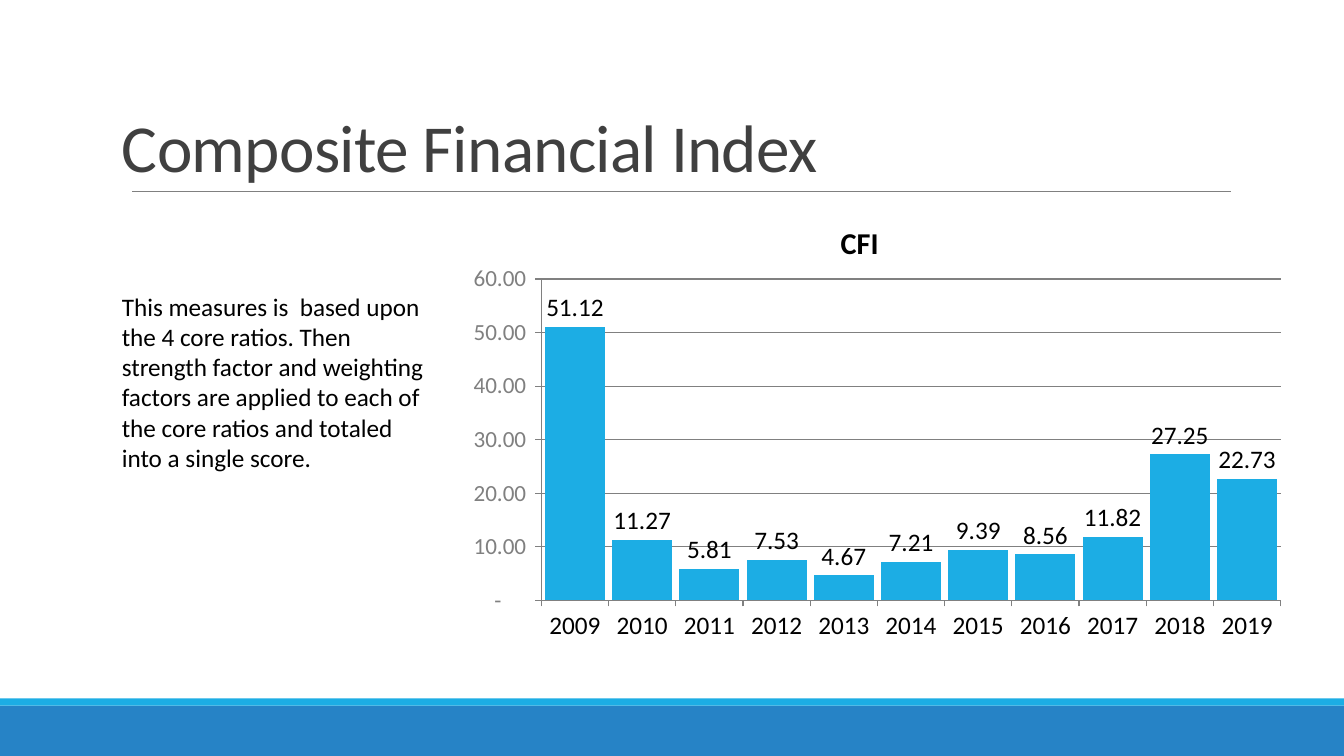
from dataclasses import dataclass

from lxml.etree import SubElement
from pptx import Presentation
from pptx.chart.data import CategoryChartData
from pptx.dml.color import RGBColor as RGB
from pptx.enum.chart import XL_CHART_TYPE as ChartType
from pptx.enum.chart import XL_LABEL_POSITION as LabelPos
from pptx.enum.chart import XL_TICK_MARK as Tick
from pptx.enum.shapes import MSO_CONNECTOR as Connector
from pptx.enum.shapes import MSO_SHAPE as Shape
from pptx.enum.text import MSO_ANCHOR as Anchor
from pptx.enum.text import MSO_AUTO_SIZE as AutoSize
from pptx.enum.text import PP_ALIGN as Align
from pptx.oxml import parse_xml
from pptx.oxml.ns import nsdecls, qn
from pptx.util import Cm, Pt


@dataclass(frozen=True)
class Theme:
    """Colours, font and type sizes of the deck."""
    font: str = "Calibri"
    title: RGB = RGB(0x40, 0x40, 0x40)
    text: RGB = RGB(0, 0, 0)
    muted: RGB = RGB(0x80, 0x80, 0x80)
    accent: RGB = RGB(0x1C, 0xAD, 0xE4)
    band: RGB = RGB(0x26, 0x83, 0xC6)
    title_size: Pt = Pt(48)
    chart_title_size: Pt = Pt(21.6)
    body_size: Pt = Pt(18)
    axis_size: Pt = Pt(16.5)


THEME = Theme()
WIDTH, HEIGHT = Cm(33.87), Cm(19.05)
VALUE_FORMAT = '_(* #,##0.00_);_(* \\(#,##0.00\\);_(* "-"??_);_(@_)'
YEARS = [str(year) for year in range(2009, 2020)]
CFI = [51.12, 11.27, 5.81, 7.53, 4.67, 7.21, 9.39, 8.56, 11.82, 27.25, 22.73]
NOTE = ("This measures is  based upon the 4 core ratios. Then strength factor "
        "and weighting factors are applied to each of the core ratios and "
        "totaled into a single score.")


def set_font(font, size, color, bold=False):
    """Apply the theme font with a size and colour."""
    font.name, font.size, font.bold = THEME.font, size, bold
    font.color.rgb = color


def add_footer(slide, x, y, w, h):
    """Draw the footer band with its thin accent strip on top."""
    strip = Cm(0.18)
    for top, height, color in ((y + strip, h - strip, THEME.band),
                               (y, strip, THEME.accent)):
        sp = slide.shapes.add_shape(Shape.RECTANGLE, x, top, w, height)
        sp.shadow.inherit = False
        sp.fill.solid()
        sp.fill.fore_color.rgb = color
        sp.line.fill.background()


def add_title(slide, text, x, y, w, h):
    """Place the title in its box with a rule along the bottom."""
    sp = slide.shapes.title
    sp.left, sp.top, sp.width, sp.height = x, y, w, h
    tf = sp.text_frame
    tf.auto_size, tf.word_wrap = AutoSize.NONE, True
    tf.vertical_anchor = Anchor.BOTTOM
    p = tf.paragraphs[0]
    p.alignment, p.line_spacing = Align.LEFT, 0.85
    r = p.add_run()
    r.text = text
    set_font(r.font, THEME.title_size, THEME.title)
    r.font._element.set("spc", "-50")
    left, bottom = x + Cm(0.51), y + h
    rule = slide.shapes.add_connector(Connector.STRAIGHT, left, bottom,
                                      left + Cm(27.69), bottom)
    rule.line.color.rgb, rule.line.width = THEME.muted, Pt(0.5)
    SubElement(rule._element.spPr, qn("a:effectLst"))


def add_note(slide, text, x, y, w, h):
    """Place the explanatory paragraph in its box."""
    tf = slide.shapes.add_textbox(x, y, w, h).text_frame
    tf.word_wrap = True
    r = tf.paragraphs[0].add_run()
    r.text = text
    set_font(r.font, THEME.body_size, THEME.text)


def set_plot_area(chart, x, y, w, h):
    """Fix the inner plot area, given as fractions of the chart."""
    parts = "".join(f'<c:{tag} val="{value:.3f}"/>'
                    for tag, value in zip("xywh", (x, y, w, h)))
    layout = parse_xml(
        f'<c:layout {nsdecls("c")}><c:manualLayout><c:layoutTarget val="inner"/>'
        f'<c:xMode val="edge"/><c:yMode val="edge"/>{parts}'
        '</c:manualLayout></c:layout>')
    area = chart._chartSpace.chart.plotArea
    for old in area.findall(qn("c:layout")):
        area.remove(old)
    area.insert(0, layout)


def style_axes(chart):
    """Format the year axis, the value axis and its gridlines."""
    years, values = chart.category_axis, chart.value_axis
    for axis, size, color in ((years, THEME.body_size, THEME.text),
                              (values, THEME.axis_size, THEME.muted)):
        axis.major_tick_mark, axis.minor_tick_mark = Tick.OUTSIDE, Tick.NONE
        axis.format.line.color.rgb = THEME.muted
        set_font(axis.tick_labels.font, size, color)
    values.minimum_scale, values.maximum_scale, values.major_unit = 0, 60, 10
    values.has_major_gridlines = True
    values.major_gridlines.format.line.color.rgb = THEME.muted
    values.tick_labels.number_format = VALUE_FORMAT
    values.tick_labels.number_format_is_linked = False


def add_cfi_chart(slide, x, y, w, h):
    """Place the column chart of the index by year in its box."""
    data = CategoryChartData(number_format="0.00")
    data.categories = YEARS
    data.add_series("CFI", CFI)
    chart = slide.shapes.add_chart(ChartType.COLUMN_CLUSTERED, x, y, w, h,
                                   data).chart
    set_font(chart.font, THEME.body_size, THEME.text)
    chart.has_legend = False
    chart.has_title = True
    r = chart.chart_title.text_frame.paragraphs[0].add_run()
    r.text = "CFI"
    set_font(r.font, THEME.chart_title_size, THEME.text, bold=True)
    chart.chart_title.include_in_layout = False
    plot = chart.plots[0]
    plot.gap_width, plot.vary_by_categories = 12, False
    fill = plot.series[0].format.fill
    fill.solid()
    fill.fore_color.rgb = THEME.accent
    labels = plot.series[0].data_labels
    labels.show_value = True
    labels.position = LabelPos.OUTSIDE_END
    labels.number_format, labels.number_format_is_linked = "0.00", False
    set_font(labels.font, THEME.body_size, THEME.text)
    style_axes(chart)
    set_plot_area(chart, Cm(2.67) / w, Cm(1.95) / h, Cm(18.63) / w, Cm(8.1) / h)


def build_index_slide(prs):
    """Add the slide with the title, the note and the chart."""
    slide = prs.slides.add_slide(prs.slide_layouts[5])
    margin, band = Cm(2.82), Cm(1.45)
    add_footer(slide, 0, HEIGHT - band, WIDTH, band)
    add_title(slide, "Composite Financial Index",
              margin, Cm(0.79), Cm(27.94), Cm(4.04))
    add_cfi_chart(slide, Cm(10.97), Cm(5.08), Cm(21.39), Cm(11.28))
    add_note(slide, NOTE, margin, Cm(7.21), Cm(8.15), Cm(4.88))


def main():
    """Build the deck and save it."""
    prs = Presentation()
    prs.slide_width, prs.slide_height = WIDTH, HEIGHT
    build_index_slide(prs)
    prs.save("out.pptx")


if __name__ == "__main__":
    main()
